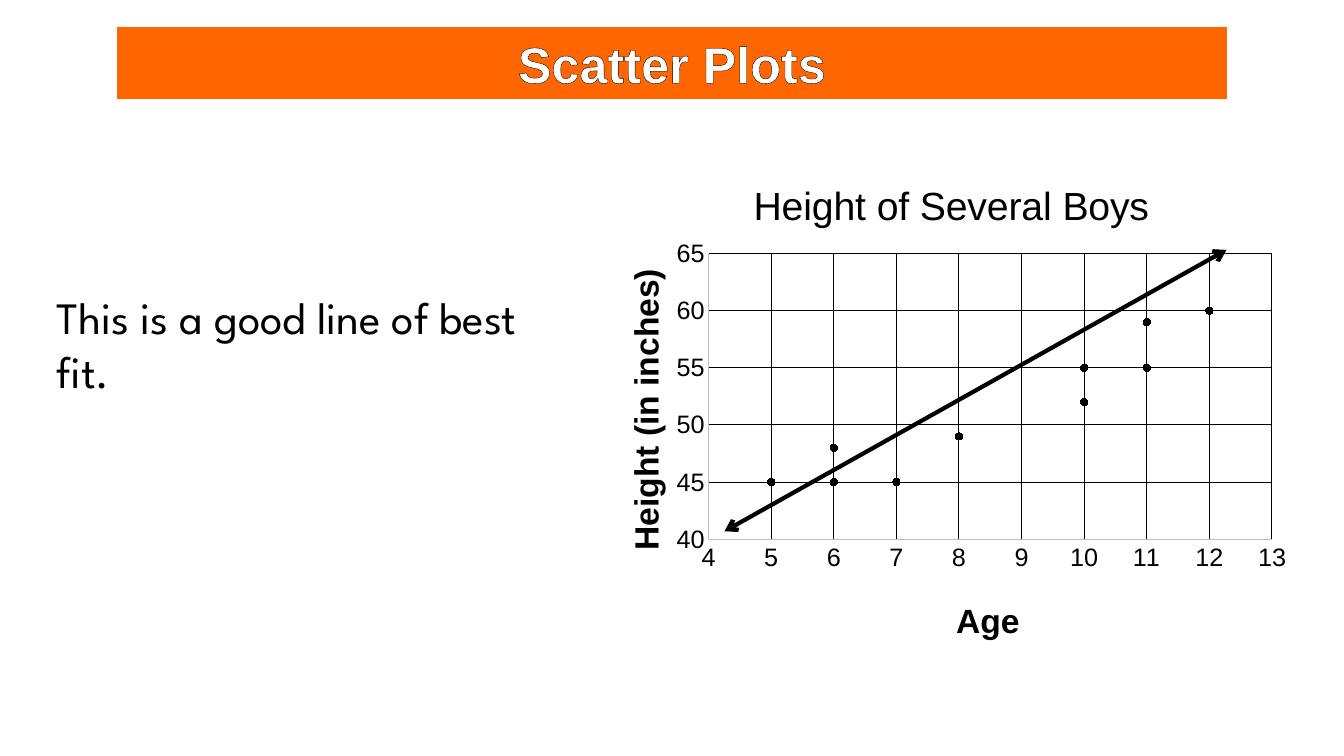
from dataclasses import dataclass

from lxml import etree
from pptx import Presentation
from pptx.chart.data import XyChartData
from pptx.dml.color import RGBColor
from pptx.enum.chart import XL_CHART_TYPE, XL_MARKER_STYLE, XL_TICK_MARK
from pptx.enum.shapes import MSO_CONNECTOR, MSO_SHAPE
from pptx.enum.text import MSO_ANCHOR, PP_ALIGN
from pptx.oxml.ns import qn
from pptx.util import Emu, Pt

COLORS = {"orange": "FF6600", "white": "FFFFFF", "black": "000000", "grey": "BFBFBF"}
EMU_PER_PX = 9525
BODY_FONT = "League Spartan"
CHART_FONT = "Arial"


@dataclass(frozen=True)
class AxisStyle:
    title: str
    low: int
    high: int
    step: int
    title_x: float
    title_y: float
    rotation: int = 0


AGE_AXIS = AxisStyle("Age", 4, 13, 1, 0.51, 0.88)
HEIGHT_AXIS = AxisStyle("Height (in inches)", 40, 65, 5, 0.045, 0.23, -5400000)
BOYS = [(11, 55), (10, 55), (8, 49), (6, 45), (10, 52),
        (11, 59), (7, 45), (12, 60), (6, 48), (5, 45)]


def px(*lengths: int) -> list[Emu]:
    return [Emu(length * EMU_PER_PX) for length in lengths]


def rgb(color: str) -> RGBColor:
    return RGBColor.from_string(COLORS[color])


def write_text(frame, text: str, *, size: int, font: str = CHART_FONT,
               color: str = "black", bold: bool = False, align=None,
               space_after: int = 0, outline: str = "") -> None:
    paragraph = frame.paragraphs[0]
    paragraph.alignment = align
    if space_after:
        paragraph.space_after = Pt(space_after)
    run = paragraph.add_run()
    run.text = text
    run.font.size, run.font.name, run.font.bold = Pt(size), font, bold
    run.font.color.rgb = rgb(color)
    if outline:
        edge = etree.Element(qn("a:ln"), w=str(Pt(0.75)))
        fill = etree.SubElement(edge, qn("a:solidFill"))
        etree.SubElement(fill, qn("a:srgbClr"), val=COLORS[outline])
        run.font._element.insert(0, edge)


def set_line(line, color: str, width: float = 0.75) -> None:
    line.color.rgb = rgb(color)
    line.width = Pt(width)


def place(element, inner: bool = False, **fractions: float) -> None:
    """Fix the place of a chart part as fractions of the chart."""
    for old in element.findall(qn("c:layout")):
        element.remove(old)
    layout = etree.Element(qn("c:layout"))
    manual = etree.SubElement(layout, qn("c:manualLayout"))
    if inner:
        etree.SubElement(manual, qn("c:layoutTarget"), val="inner")
    for mode in ("xMode", "yMode"):
        etree.SubElement(manual, qn(f"c:{mode}"), val="edge")
    for key, value in fractions.items():
        etree.SubElement(manual, qn(f"c:{key}"), val=str(value))
    text = element.find(qn("c:tx"))
    element.insert(0 if text is None else element.index(text) + 1, layout)


def style_axis(axis, style: AxisStyle) -> None:
    axis.minimum_scale, axis.maximum_scale = style.low, style.high
    axis.major_unit = style.step
    axis.major_tick_mark = axis.minor_tick_mark = XL_TICK_MARK.NONE
    axis.has_major_gridlines = True
    set_line(axis.major_gridlines.format.line, "black")
    set_line(axis.format.line, "grey")
    axis.tick_labels.font.size = Pt(18)
    title = axis.axis_title
    write_text(title.text_frame, style.title, size=24, bold=True)
    body = title._element.find(f".//{qn('a:bodyPr')}")
    body.set("rot", str(style.rotation))
    body.set("vert", "horz")
    place(title._element, x=style.title_x, y=style.title_y)


def add_banner(slide) -> None:
    banner = slide.shapes.add_shape(MSO_SHAPE.RECTANGLE, *px(112, 26, 1056, 68))
    banner.shadow.inherit = False
    banner.fill.solid()
    banner.fill.fore_color.rgb = rgb("orange")
    set_line(banner.line, "orange")
    write_text(banner.text_frame, "Scatter Plots", size=36, color="white", bold=True,
               align=PP_ALIGN.CENTER, space_after=12, outline="black")


def add_height_chart(slide) -> None:
    data = XyChartData()
    boys = data.add_series("Series 1")
    for age, height in BOYS:
        boys.add_data_point(age, height)
    chart = slide.shapes.add_chart(
        XL_CHART_TYPE.XY_SCATTER, *px(558, 139, 680, 484), data).chart
    chart.has_legend = False
    chart.font.name, chart.font.size = CHART_FONT, Pt(10)
    chart.font.color.rgb = rgb("black")
    chart.has_title = True
    write_text(chart.chart_title.text_frame, "Height of Several Boys", size=28)
    place(chart.chart_title._element, x=0.225, y=0.055)
    style_axis(chart.category_axis, AGE_AXIS)
    style_axis(chart.value_axis, HEIGHT_AXIS)
    place(chart._chartSpace.chart.plotArea, inner=True, x=0.172, y=0.212, w=0.789, h=0.562)

    plot = chart.plots[0]
    plot.vary_by_categories = False
    points = plot.series[0]
    points.smooth = False
    points.format.line.fill.background()
    points.marker.style, points.marker.size = XL_MARKER_STYLE.CIRCLE, 5
    points.marker.format.fill.solid()
    points.marker.format.fill.fore_color.rgb = rgb("black")
    set_line(points.marker.format.line, "black")


def add_statement(slide) -> None:
    statement = slide.shapes.add_textbox(*px(54, 276, 484, 104)).text_frame
    statement.word_wrap = True
    statement.vertical_anchor = MSO_ANCHOR.TOP
    statement.margin_left = statement.margin_right = 0
    statement.margin_top = statement.margin_bottom = 0
    write_text(statement, "This is a good line of best fit.", size=32,
               font=BODY_FONT, space_after=6)


def add_fit_line(slide) -> None:
    fit = slide.shapes.add_connector(MSO_CONNECTOR.STRAIGHT, *px(690, 506, 1168, 238))
    set_line(fit.line, "black", 3)
    for end in ("headEnd", "tailEnd"):
        etree.SubElement(fit.line._get_or_add_ln(), qn(f"a:{end}"), type="arrow")
    etree.SubElement(fit._element.spPr, qn("a:effectLst"))


def main() -> None:
    deck = Presentation()
    deck.slide_width, deck.slide_height = px(1280, 720)
    slide = deck.slides.add_slide(deck.slide_layouts[6])
    add_banner(slide)
    add_height_chart(slide)
    add_statement(slide)
    add_fit_line(slide)
    deck.save("out.pptx")


if __name__ == "__main__":
    main()
